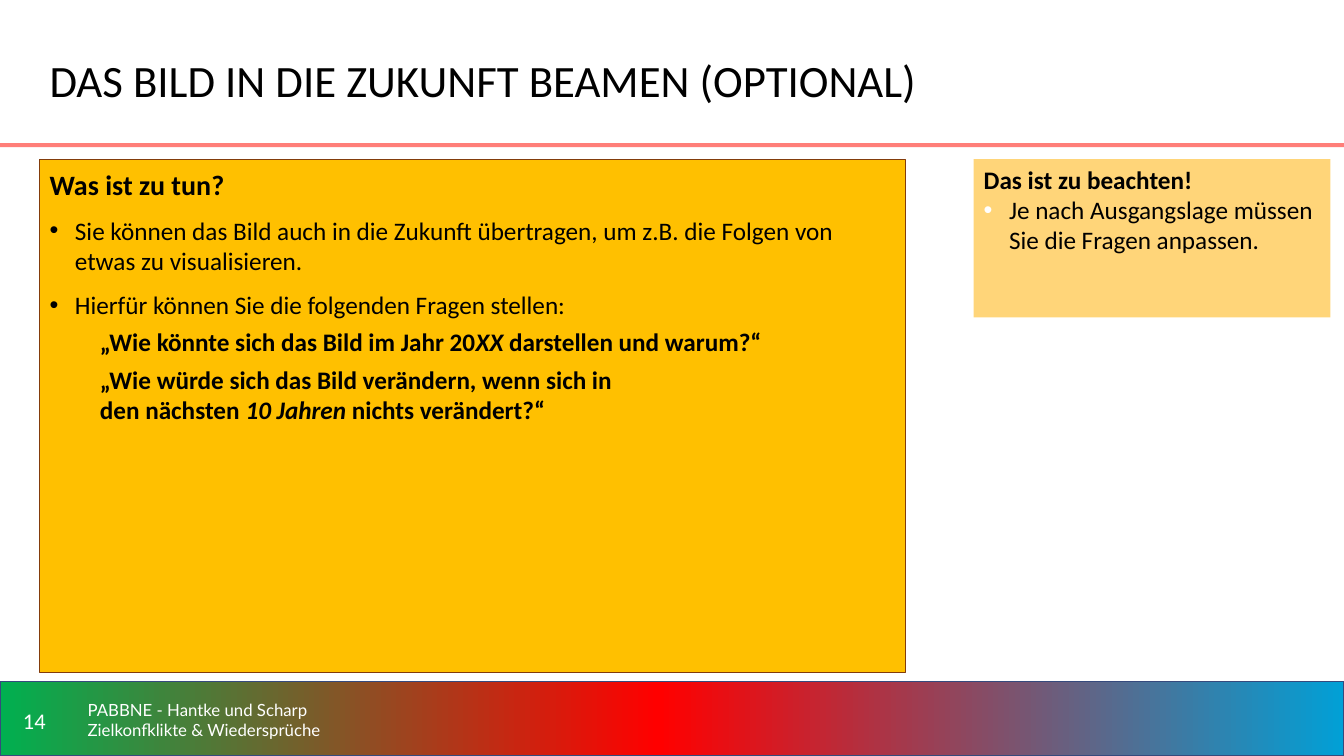
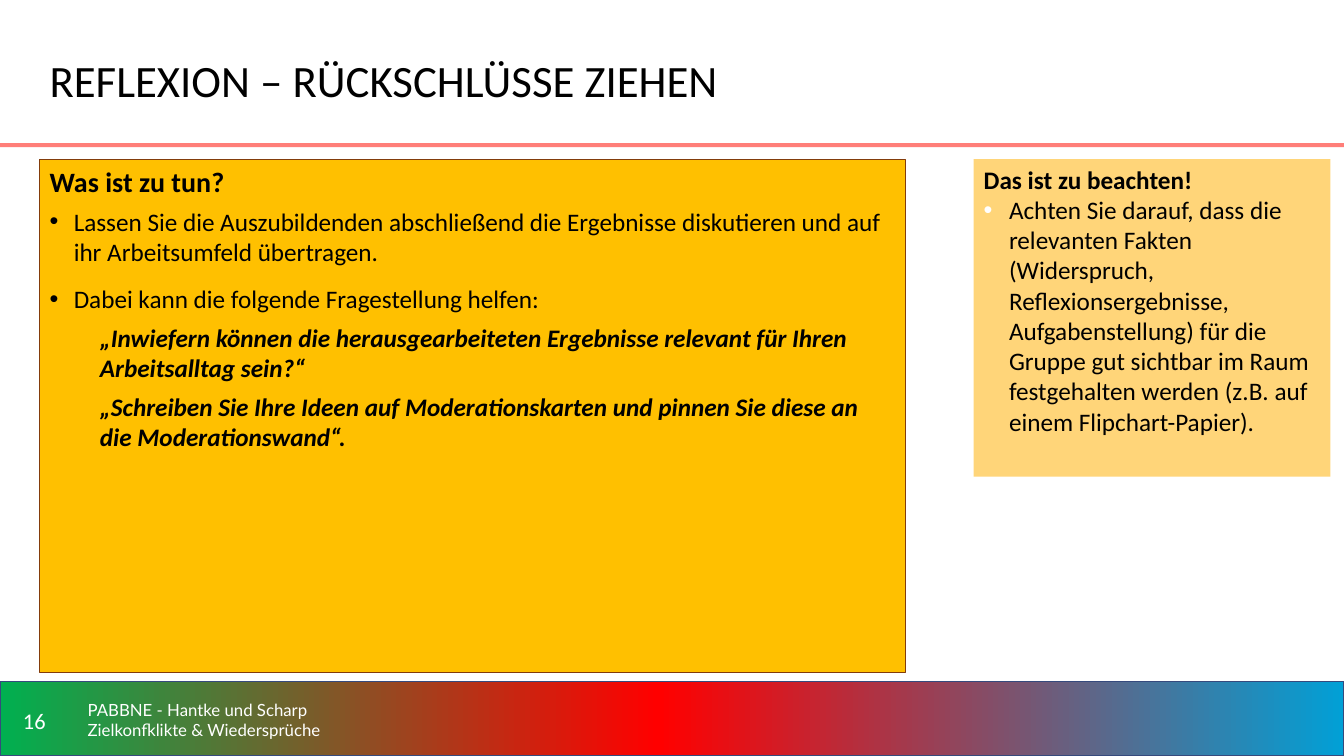
from copy import deepcopy
from dataclasses import dataclass

from lxml.etree import SubElement
from pptx import Presentation
from pptx.dml.color import RGBColor
from pptx.enum.shapes import MSO_SHAPE
from pptx.enum.text import MSO_ANCHOR, PP_ALIGN
from pptx.oxml.ns import qn
from pptx.util import Cm, Pt


@dataclass(frozen=True)
class Theme:
    text: str = "000000"
    light: str = "FFFFFF"
    rule: str = "FF7E79"
    task_fill: str = "FFC000"
    task_line: str = "833C0B"
    note_fill: str = "FFD579"
    band_line: str = "364A7D"
    band_stops: tuple = ((0, "00B050"), (0.49, "FF0000"), (1, "01A0D6"))
    font: str = "Calibri"
    footer_font: str = "Lato"
    title_size: int = 32
    heading_size: int = 20
    body_size: int = 18
    number_size: int = 16
    footer_size: int = 12


THEME = Theme()

# Content: each paragraph is (spans, format); a span is (text, style letters)
FOOTER = "PABBNE - Hantke und Scharp Zielkonfklikte & Wiedersprüche"
TASK_HEADING = "Was ist zu tun?"
NOTE_HEADING = "Das ist zu beachten!"
SLIDES = [
    {
        "number": "14",
        "title": "DAS BILD IN DIE ZUKUNFT BEAMEN (OPTIONAL)",
        "heading_spacing": 1.1,
        "indent": 0.64,
        "points": [
            ("Sie können das Bild auch in die Zukunft übertragen, um z.B. die Folgen von "
             "etwas zu visualisieren.", 10),
            ("Hierfür können Sie die folgenden Fragen stellen:", 10),
        ],
        "quote_gap": 5,
        "quotes": [
            [("„Wie könnte sich das Bild im Jahr 20", "b"), ("XX", "bi"),
             (" darstellen und warum?“", "b")],
            [("„Wie würde sich das Bild verändern, wenn sich in \nden nächsten ", "b"),
             ("10 Jahren ", "bi"), ("nichts verändert?“", "b")],
        ],
        "note": "Je nach Ausgangslage müssen Sie die Fragen anpassen.",
        "note_height": 3.99,
    },
    {
        "number": "16",
        "title": "REFLEXION – RÜCKSCHLÜSSE ZIEHEN",
        "heading_spacing": 1.0,
        "indent": 0.61,
        "points": [
            ("Lassen Sie die Auszubildenden abschließend die Ergebnisse diskutieren und auf "
             "ihr Arbeitsumfeld übertragen.", 6),
            ("Dabei kann die folgende Fragestellung helfen:", 12),
        ],
        "quote_gap": 6,
        "quotes": [
            [("„Inwiefern können die herausgearbeiteten Ergebnisse relevant für Ihren "
              "Arbeitsalltag sein?“", "bi")],
            [("„Schreiben Sie Ihre Ideen auf Moderationskarten und pinnen Sie diese an "
              "die Moderationswand“.", "bi")],
        ],
        "note": "Achten Sie darauf, dass die relevanten Fakten (Widerspruch, "
                "Reflexionsergebnisse, Aufgabenstellung) für die Gruppe gut sichtbar im Raum "
                "festgehalten werden (z.B. auf einem Flipchart-Papier).",
        "note_height": 8,
    },
]

# Layout in centimetres: left, top, width, height
PAGE_WIDTH, PAGE_HEIGHT = 33.87, 19.05
BAND_TOP = 17.17
BAND = (0, BAND_TOP, PAGE_WIDTH, PAGE_HEIGHT - BAND_TOP)
RULE = (0, 3.61, PAGE_WIDTH, 0.1)
TITLE = (1, 0.5, 25, 3)
NUMBER = (0, 17.37, 1.73, 1.55)
FOOTER_AREA = (1.96, 17.37, 7.06, 1.55)
TASK = (1, 4.01, 21.82, 12.93)
NOTE_LEFT, NOTE_WIDTH = 24.54, 8.99
NOTE_INDENT, QUOTE_INDENT = 0.64, 1.27


def add_box(page, area, fill, line=None, line_width=1):
    left, top, width, height = map(Cm, area)
    box = page.shapes.add_shape(MSO_SHAPE.RECTANGLE, left, top, width, height)
    box.shadow.inherit = False
    if fill:
        box.fill.solid()
        box.fill.fore_color.rgb = RGBColor.from_string(fill)
    if line:
        box.line.color.rgb = RGBColor.from_string(line)
        box.line.width = Pt(line_width)
    else:
        box.line.fill.background()
    return box


def add_band(page):
    band = add_box(page, BAND, None, THEME.band_line)
    band.fill.gradient()
    band.fill.gradient_angle = 0
    stop_list = band.fill._xPr.find(".//" + qn("a:gsLst"))
    stop_list.append(deepcopy(stop_list[0]))
    for stop, (position, color) in zip(band.fill.gradient_stops, THEME.band_stops):
        stop.position = position
        stop.color.rgb = RGBColor.from_string(color)


def set_indent(para, margin, bullet_color=None):
    properties = para._p.get_or_add_pPr()
    properties.set("marL", str(Cm(margin)))
    properties.set("indent", str(-Cm(margin) if bullet_color else 0))
    if bullet_color:
        color = SubElement(properties, qn("a:buClr"))
        SubElement(color, qn("a:srgbClr")).set("val", bullet_color)
        SubElement(properties, qn("a:buFont")).set("typeface", "Arial")
        SubElement(properties, qn("a:buChar")).set("char", "•")


def write_spans(para, spans, size, color, font):
    for text, style in spans:
        for index, piece in enumerate(text.split("\n")):
            if index:
                para.add_line_break()
            span = para.add_run()
            span.text = piece
            formats = {"size": Pt(size), "name": font, "bold": "b" in style, "italic": "i" in style}
            for name, value in formats.items():
                setattr(span.font, name, value)
            span.font.color.rgb = RGBColor.from_string(color)


def write_paragraphs(box, paragraphs, anchor=MSO_ANCHOR.TOP):
    frame = box.text_frame
    frame.word_wrap = True
    frame.vertical_anchor = anchor
    for index, (spans, layout) in enumerate(paragraphs):
        para = frame.add_paragraph() if index else frame.paragraphs[0]
        if "margin" in layout:
            set_indent(para, layout["margin"], layout.get("bullet"))
        formats = {
            "alignment": layout.get("align", PP_ALIGN.LEFT),
            "space_before": Pt(layout.get("gap", 0)),
            "line_spacing": layout.get("spacing", 1.0),
        }
        for name, value in formats.items():
            setattr(para, name, value)
        write_spans(para, spans, layout.get("size", THEME.body_size),
                    layout.get("color", THEME.text), layout.get("font", THEME.font))


def add_label(page, area, text, **layout):
    box = page.shapes.add_textbox(*map(Cm, area))
    write_paragraphs(box, [([(text, "")], layout)], MSO_ANCHOR.MIDDLE)


def add_frame(page, title, number):
    add_band(page)
    add_box(page, RULE, THEME.rule)
    add_label(page, TITLE, title, size=THEME.title_size)
    add_label(page, NUMBER, number, size=THEME.number_size, color=THEME.light,
              align=PP_ALIGN.CENTER)
    add_label(page, FOOTER_AREA, FOOTER, size=THEME.footer_size, color=THEME.light,
              font=THEME.footer_font)


def add_task(page, content):
    heading = {"size": THEME.heading_size, "spacing": content["heading_spacing"]}
    paragraphs = [([(TASK_HEADING, "b")], heading)]
    for text, gap in content["points"]:
        layout = {"margin": content["indent"], "bullet": THEME.text, "gap": gap}
        paragraphs.append(([(text, "")], layout))
    for spans in content["quotes"]:
        paragraphs.append((spans, {"margin": QUOTE_INDENT, "gap": content["quote_gap"]}))
    write_paragraphs(add_box(page, TASK, THEME.task_fill, THEME.task_line, 0.75), paragraphs)


def add_note(page, content):
    area = (NOTE_LEFT, TASK[1], NOTE_WIDTH, content["note_height"])
    write_paragraphs(add_box(page, area, THEME.note_fill), [
        ([(NOTE_HEADING, "b")], {}),
        ([(content["note"], "")], {"margin": NOTE_INDENT, "bullet": THEME.light}),
    ])


def main():
    deck = Presentation()
    deck.slide_width, deck.slide_height = Cm(PAGE_WIDTH), Cm(PAGE_HEIGHT)
    blank = deck.slide_layouts[6]
    for content in SLIDES:
        page = deck.slides.add_slide(blank)
        add_frame(page, content["title"], content["number"])
        add_task(page, content)
        add_note(page, content)
    deck.save("out.pptx")


if __name__ == "__main__":
    main()
